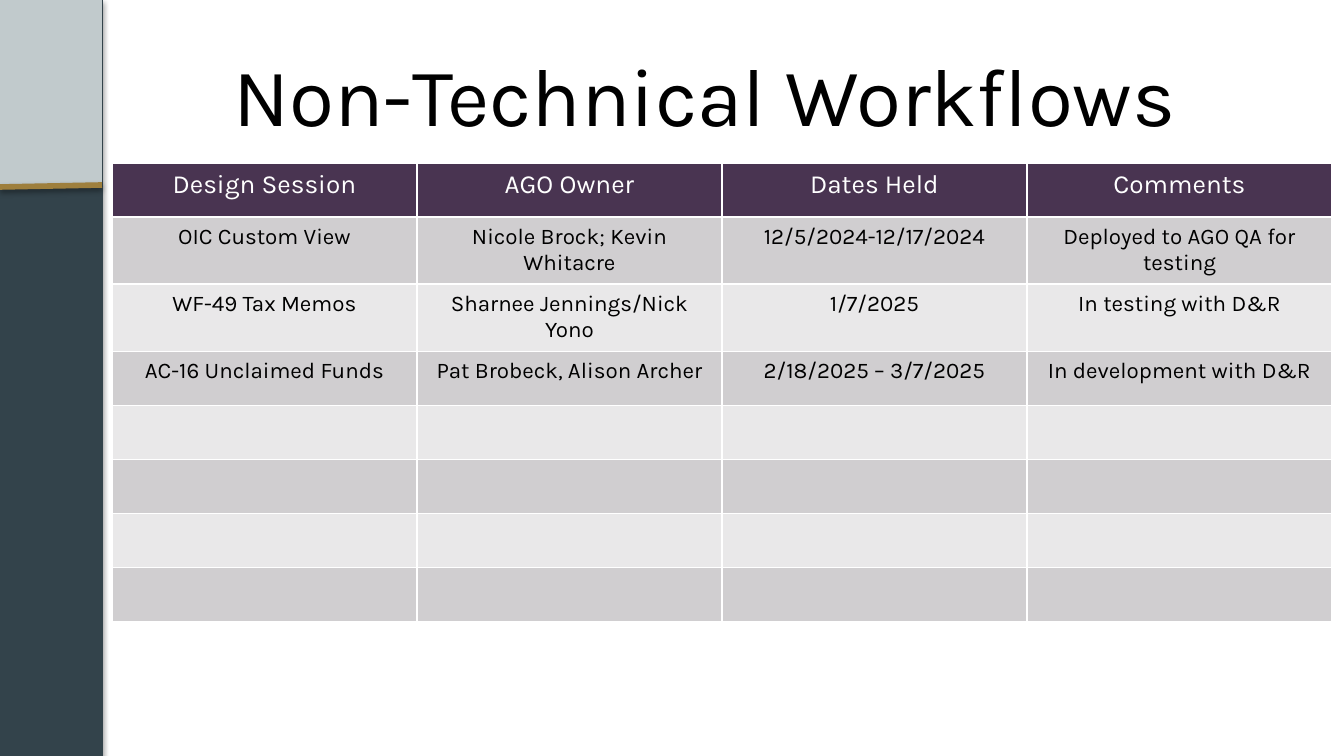
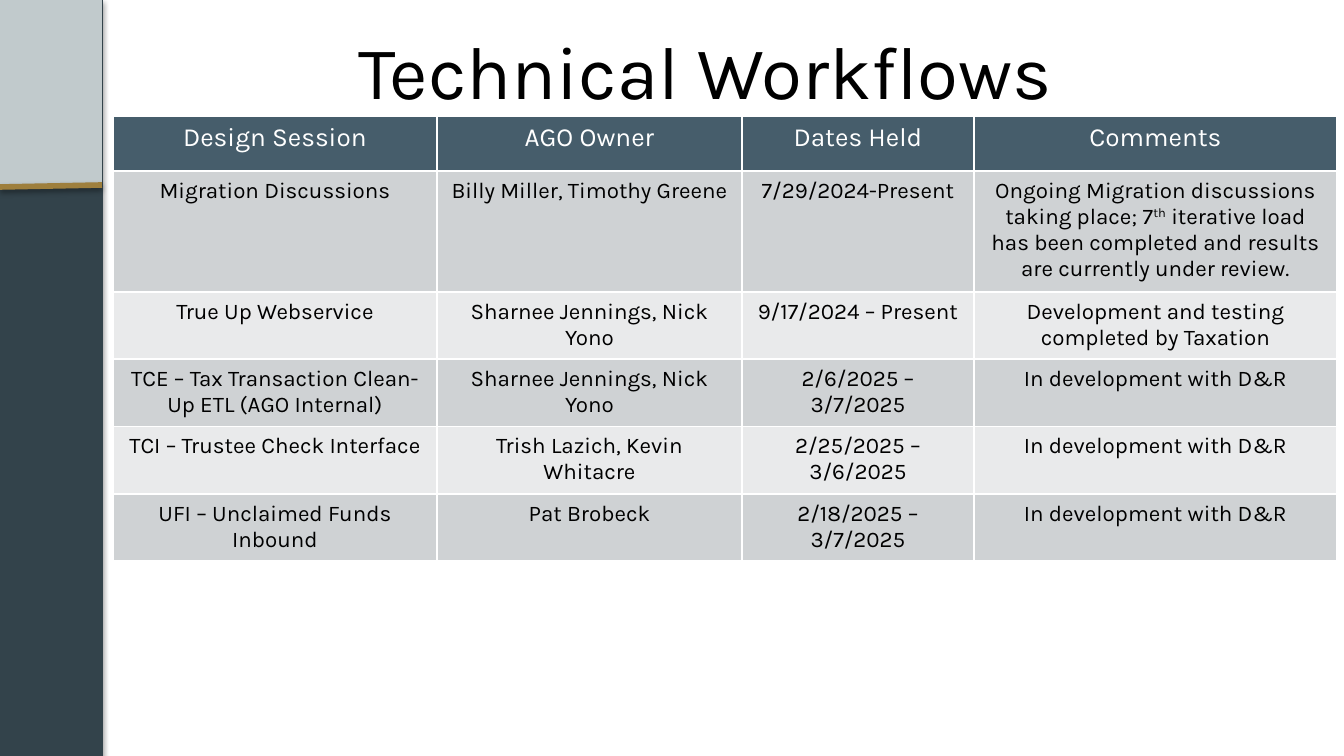
from dataclasses import dataclass

from lxml.etree import SubElement
from pptx import Presentation
from pptx.dml.color import RGBColor
from pptx.enum.shapes import MSO_CONNECTOR, MSO_SHAPE
from pptx.enum.text import MSO_ANCHOR, PP_ALIGN
from pptx.oxml.ns import qn
from pptx.util import Pt

SCALE = 914400 / 134.4
WIDE, HIGH = 1344, 756
SIDE = 102


@dataclass(frozen=True)
class Theme:
    font: str = "Karla"
    ink: str = "000000"
    white: str = "FFFFFF"
    slate: str = "33434B"
    mist: str = "C1CACC"
    gold: str = "9E7F3D"
    plum: tuple = ("493451", "D0CED0", "E9E8E9")
    steel: tuple = ("465D6B", "CFD2D4", "E9EAEB")
    head: int = 14
    body: int = 12


THEME = Theme()

HEADS = ["Design Session", "AGO Owner", "Dates Held", "Comments"]
BLANK = [""] * len(HEADS)
BUILD = "In development with D&R"

MANUAL = [
    HEADS,
    ["OIC Custom View", "Nicole Brock; Kevin Whitacre",
     "12/5/2024-12/17/2024", "Deployed to AGO QA for testing"],
    ["WF-49 Tax Memos", "Sharnee Jennings/Nick Yono", "1/7/2025",
     "In testing with D&R"],
    ["AC-16 Unclaimed Funds", "Pat Brobeck, Alison Archer",
     "2/18/2025 – 3/7/2025", BUILD],
    *[BLANK] * 4,
]

SYSTEM = [
    HEADS,
    ["Migration Discussions", "Billy Miller, Timothy Greene",
     "7/29/2024-Present",
     "Ongoing Migration discussions taking place; 7^th^ iterative load "
     "has been completed and results are currently under review."],
    ["True Up Webservice", "Sharnee Jennings, Nick Yono",
     "9/17/2024 – Present", "Development and testing completed by Taxation"],
    ["TCE – Tax Transaction Clean-Up ETL (AGO Internal)",
     "Sharnee Jennings, Nick Yono", "2/6/2025 – 3/7/2025", BUILD],
    ["TCI – Trustee Check Interface", "Trish Lazich, Kevin Whitacre",
     "2/25/2025 – 3/6/2025", BUILD],
    ["UFI – Unclaimed Funds Inbound", "Pat Brobeck",
     "2/18/2025 – 3/7/2025", BUILD],
]


def px(*sizes):
    return [round(size * SCALE) for size in sizes]


def rgb(code):
    return RGBColor.from_string(code)


def style(run, size, color):
    font = run.font
    font.name, font.size, font.bold = THEME.font, Pt(size), False
    font.color.rgb = rgb(color)


def shade(shape, alpha, dist):
    """Give a shape or connector a soft black shadow that falls downward."""
    group = SubElement(shape._element.spPr, qn("a:effectLst"))
    outer = SubElement(group, qn("a:outerShdw"), blurRad=str(Pt(3.1)),
                       dist=str(Pt(dist)), dir="5400000", rotWithShape="0")
    black = SubElement(outer, qn("a:srgbClr"), val=THEME.ink)
    SubElement(black, qn("a:alpha"), val=str(alpha * 1000))


def panel(slide, high, color):
    shape = slide.shapes.add_shape(MSO_SHAPE.RECTANGLE, *px(0, 0, SIDE, high))
    shape.fill.solid()
    shape.fill.fore_color.rgb = rgb(color)
    return shape


def band(slide):
    """Draw the side band, its light top and the gold rule."""
    side = panel(slide, HIGH, THEME.slate)
    side.line.color.rgb = rgb(THEME.slate)
    side.line.width = Pt(0.75)
    shade(side, 35, 1.8)

    top = panel(slide, 185, THEME.mist)
    top.line.fill.background()
    top.shadow.inherit = False

    rule = slide.shapes.add_connector(MSO_CONNECTOR.STRAIGHT,
                                      *px(0, 187, SIDE, 185))
    rule.line.color.rgb = rgb(THEME.gold)
    rule.line.width = Pt(3)
    shade(rule, 38, 1.6)


def title(slide, text, top, size):
    frame = slide.shapes.add_textbox(*px(133, top, 1144, 126)).text_frame
    frame.word_wrap = True
    frame.vertical_anchor = MSO_ANCHOR.MIDDLE
    frame.text = text
    line = frame.paragraphs[0]
    line.alignment = PP_ALIGN.CENTER
    style(line.runs[0], size, THEME.ink)


def write(cell, text, size, color):
    """Fill a cell with centred text; parts between ^ marks are raised."""
    line = cell.text_frame.paragraphs[0]
    line.alignment = PP_ALIGN.CENTER
    if not text:
        return
    for index, part in enumerate(text.split("^")):
        run = line.add_run()
        run.text = part
        style(run, size, color)
        if index % 2:
            run._r.get_or_add_rPr().set("baseline", "30000")


def grid(slide, rows, spot, wides, highs, fills):
    """Add a table with a dark head row and two alternating row fills."""
    frame = slide.shapes.add_table(len(rows), len(wides),
                                   *px(*spot, sum(wides), sum(highs)))
    table = frame.table
    for column, wide in zip(table.columns, px(*wides)):
        column.width = wide
    for row, high in zip(table.rows, px(*highs)):
        row.height = high
    head, odd, even = fills
    for y, texts in enumerate(rows):
        fill = head if y == 0 else odd if y % 2 else even
        size = THEME.body if y else THEME.head
        color = THEME.ink if y else THEME.white
        for x, text in enumerate(texts):
            cell = table.cell(y, x)
            cell.fill.solid()
            cell.fill.fore_color.rgb = rgb(fill)
            write(cell, text, size, color)


def main():
    deck = Presentation()
    deck.slide_width, deck.slide_height = px(WIDE, HIGH)
    blank = deck.slide_layouts[6]

    slide = deck.slides.add_slide(blank)
    band(slide)
    title(slide, "Non-Technical Workflows", 31, 44)
    grid(slide, MANUAL, (112, 163), [305] * 4, [54] * 8, THEME.plum)

    slide = deck.slides.add_slide(blank)
    band(slide)
    title(slide, "Technical Workflows", 7, 40)
    grid(slide, SYSTEM, (113, 116), [324, 305, 232, 363],
         [55, 38, 30, 35, 35, 35], THEME.steel)

    deck.save("out.pptx")


if __name__ == "__main__":
    main()
